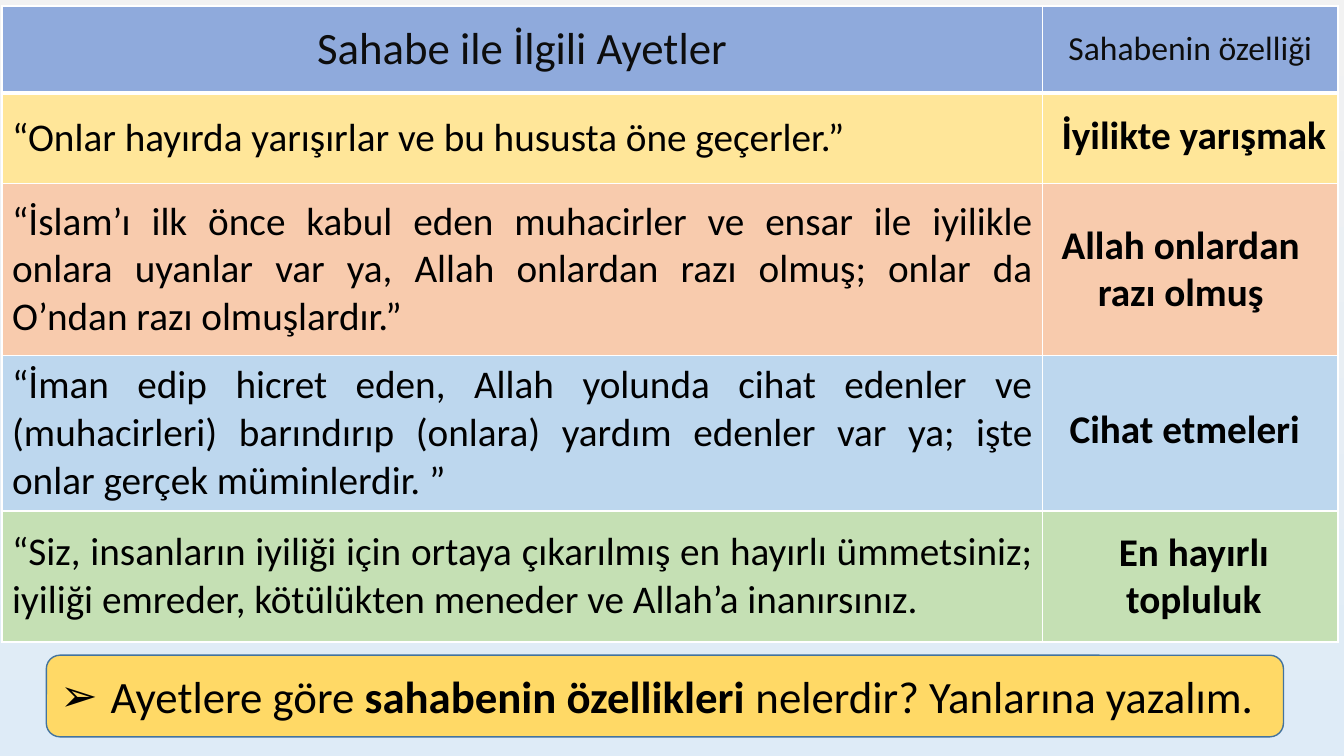
from dataclasses import dataclass

from lxml.etree import SubElement
from pptx import Presentation
from pptx.dml.color import RGBColor
from pptx.enum.shapes import MSO_SHAPE as SHAPE
from pptx.enum.text import MSO_ANCHOR as ANCHOR, MSO_AUTO_SIZE as AUTO, PP_ALIGN as ALIGN
from pptx.oxml.ns import qn
from pptx.util import Emu, Pt

PX = 9144  # 100 px to the inch
FONT = "Calibri"
BLACK, HEADING, WHITE = "000000", "0D0D0D", "FFFFFF"
HEADER_FILL = "8FAADC"
COLUMN_WIDTHS = (1032, 293)
HEADER_HEIGHT = 86


@dataclass
class Verse:
    text: str
    fill: str
    height: int


@dataclass
class Trait:
    text: str
    left: int
    top: int
    width: int
    height: int


VERSES = [
    Verse("“Onlar hayırda yarışırlar ve bu hususta öne geçerler.”", "FFE699", 90),
    Verse("“İslam’ı ilk önce kabul eden muhacirler ve ensar ile iyilikle onlara "
          "uyanlar var ya, Allah onlardan razı olmuş; onlar da O’ndan razı "
          "olmuşlardır.”", "F8CBAD", 171),
    Verse("“İman edip hicret eden, Allah yolunda cihat edenler ve (muhacirleri) "
          "barındırıp (onlara) yardım edenler var ya; işte onlar gerçek "
          "müminlerdir. ”", "BDD7EE", 154),
    Verse("“Siz, insanların iyiliği için ortaya çıkarılmış en hayırlı ümmetsiniz; "
          "iyiliği emreder, kötülükten meneder ve Allah’a inanırsınız.", "C5E0B4", 130),
]
TRAITS = [
    Trait("İyilikte yarışmak", 1035, 105, 298, 57),
    Trait("Allah onlardan razı olmuş", 1029, 214, 284, 104),
    Trait("Cihat etmeleri", 1042, 396, 266, 57),
    Trait("En hayırlı topluluk", 1035, 518, 298, 104),
]
QUESTION = [("Ayetlere göre ", False), ("sahabenin özellikleri ", True),
            ("nelerdir? Yanlarına yazalım.", False)]


def px(n: int) -> Emu:
    return Emu(n * PX)


def rgb(value: str) -> RGBColor:
    return RGBColor.from_string(value)


def style_run(r, size: int, color: str = BLACK, bold: bool = False) -> None:
    r.font.name, r.font.size, r.font.bold = FONT, Pt(size), bold
    r.font.color.rgb = rgb(color)


def write(tf, text: str, size: int, align: ALIGN, color: str = BLACK,
          bold: bool = False) -> None:
    tf.text = text
    p = tf.paragraphs[0]
    p.alignment = align
    for r in p.runs:
        style_run(r, size, color, bold)


def paint_cell(cell, fill: str, bottom: int = 1) -> None:
    """Give the cell white borders and a fill; bottom is in points."""
    tc_pr = cell._tc.get_or_add_tcPr()
    for side, width in (("L", 1), ("R", 1), ("T", 1), ("B", bottom)):
        ln = SubElement(tc_pr, qn(f"a:ln{side}"), w=str(Pt(width)))
        SubElement(SubElement(ln, qn("a:solidFill")), qn("a:srgbClr"), val=WHITE)
    cell.fill.solid()
    cell.fill.fore_color.rgb = rgb(fill)
    cell.vertical_anchor = ANCHOR.MIDDLE


def add_verse_table(slide) -> None:
    heights = [HEADER_HEIGHT] + [v.height for v in VERSES]
    table = slide.shapes.add_table(len(heights), len(COLUMN_WIDTHS), px(2), px(6),
                                   px(sum(COLUMN_WIDTHS)), px(sum(heights))).table
    table.first_row = table.horz_banding = False
    for column, width in zip(table.columns, COLUMN_WIDTHS):
        column.width = px(width)
    for row, height in zip(table.rows, heights):
        row.height = px(height)
    headings = (("Sahabe ile İlgili Ayetler", 32), ("Sahabenin özelliği", 24))
    for cell, (text, size) in zip(table.rows[0].cells, headings):
        paint_cell(cell, HEADER_FILL, bottom=3)
        write(cell.text_frame, text, size, ALIGN.CENTER, HEADING)
    for i, verse in enumerate(VERSES, start=1):
        for cell in table.rows[i].cells:
            paint_cell(cell, verse.fill)
        write(table.cell(i, 0).text_frame, verse.text, 28, ALIGN.JUSTIFY)


def add_question(slide) -> None:
    sp = slide.shapes.add_shape(SHAPE.ROUNDED_RECTANGLE, px(46), px(650), px(1227), px(81))
    sp.shadow.inherit = False
    sp.fill.solid()
    sp.fill.fore_color.rgb = rgb("FFD966")
    sp.line.color.rgb = rgb("43739E")
    sp.line.width = Pt(1)
    tf = sp.text_frame
    tf.word_wrap = True
    tf.vertical_anchor = ANCHOR.MIDDLE
    p = tf.paragraphs[0]
    p.alignment = ALIGN.JUSTIFY
    p_pr = p._p.get_or_add_pPr()
    p_pr.set("marL", str(px(50)))
    p_pr.set("indent", str(px(-50)))
    SubElement(p_pr, qn("a:buFont"), typeface="Arial")
    SubElement(p_pr, qn("a:buChar"), char="➢")
    for text, bold in QUESTION:
        r = p.add_run()
        r.text = text
        style_run(r, 32, bold=bold)


def add_trait(slide, trait: Trait) -> None:
    tf = slide.shapes.add_textbox(px(trait.left), px(trait.top), px(trait.width),
                                  px(trait.height)).text_frame
    tf.word_wrap = True
    tf.auto_size = AUTO.SHAPE_TO_FIT_TEXT
    write(tf, trait.text, 28, ALIGN.CENTER, bold=True)


def set_background(slide) -> None:
    fill = slide.background.fill
    fill.gradient()
    fill.gradient_angle = 270
    for stop, color in zip(fill.gradient_stops, ("F2F2F2", "DEEBF7")):
        stop.color.rgb = rgb(color)


def main() -> None:
    prs = Presentation()
    prs.slide_width, prs.slide_height = px(1333), px(750)
    slide = prs.slides.add_slide(prs.slide_layouts[6])
    set_background(slide)
    add_verse_table(slide)
    add_question(slide)
    for trait in TRAITS:
        add_trait(slide, trait)
    prs.save("out.pptx")


if __name__ == "__main__":
    main()
